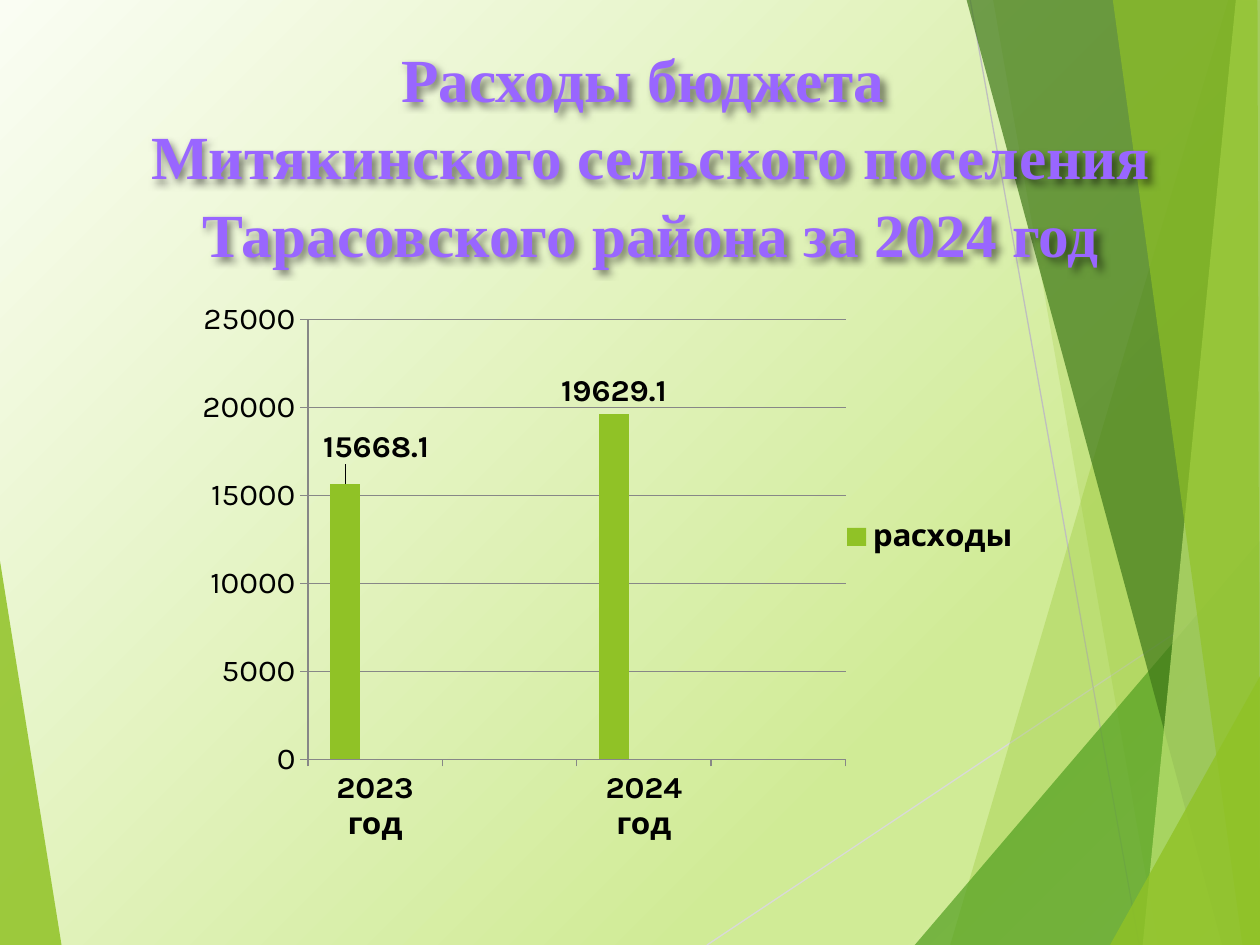
import pptx
import pptx.chart.data
import pptx.dml.color
import pptx.enum.chart
import pptx.enum.shapes
import pptx.enum.text
import pptx.oxml
import pptx.oxml.ns
import pptx.util
from pptx.util import Pt

COLORS = {
    "lime": "90C226", "green": "54A021", "dark": "3F7819", "pale": "C0E474",
    "gold": "E6B91E", "title": "9966FF", "text": "000000", "axis": "878787",
    "ray_light": "D9D9D9", "ray": "BFBFBF",
}
BACKGROUND_STOPS = [(0, "FAFDF3"), (74, "D0EB96"), (83, "D0EB96"), (100, "DFF1B9")]
RIGHT, BOTTOM = 720.7, 540

# Outline corners, colour, opacity in percent
LEFT_WEDGE = ([(-0.7, 316), (35.3, 540.7), (-0.7, 540)], "lime", 85)
RIGHT_FACETS = [
    ([(702, 0), (543, BOTTOM), (721.4, 540.7), (RIGHT, 0.7)], "lime", 30),
    ([(567.4, -0.7), (661.7, BOTTOM), (RIGHT, BOTTOM), (RIGHT, -0.7)], "lime", 20),
    ([(522.7, BOTTOM), (720, 309), (RIGHT, BOTTOM)], "green", 72),
    ([(552.2, -0.7), (698.4, BOTTOM), (RIGHT, BOTTOM), (RIGHT, -0.7)], "dark", 70),
    ([(706.3, -0.7), (653, BOTTOM), (RIGHT, BOTTOM), (720, -0.7)], "pale", 70),
    ([(635.8, -0.7), (710, BOTTOM), (720, BOTTOM), (718.6, -0.7)], "lime", 65),
    ([(634.3, BOTTOM), (RIGHT, 385.2), (RIGHT, BOTTOM)], "lime", 80),
]
RAYS = [((404, 540), (720.7, 329), "ray_light"), ((554.4, 0), (651, 540), "ray")]


def rgb(name):
    return pptx.dml.color.RGBColor.from_string(COLORS[name])


def xml(tag, body):
    """Parse an element whose tag and body use the a: and c: prefixes."""
    prefixes = pptx.oxml.ns.nsdecls("a", "c")
    return pptx.oxml.parse_xml(f"<{tag} {prefixes}>{body}</{tag}>")


def manual_layout(x, y, size=None, inner=False):
    edge = '<c:xMode val="edge"/><c:yMode val="edge"/>' if size else ""
    target = '<c:layoutTarget val="inner"/>' if inner else ""
    extent = f'<c:w val="{size[0]}"/><c:h val="{size[1]}"/>' if size else ""
    return xml("c:layout", f'<c:manualLayout>{target}{edge}<c:x val="{x}"/>'
                           f'<c:y val="{y}"/>{extent}</c:manualLayout>')


def paint_background(slide):
    slide.background.fill.gradient()
    gradient = slide.element.find(".//" + pptx.oxml.ns.qn("a:gradFill"))
    for child in list(gradient):
        gradient.remove(child)
    stops = "".join(f'<a:gs pos="{pos * 1000}"><a:srgbClr val="{color}"/></a:gs>'
                    for pos, color in BACKGROUND_STOPS)
    gradient.append(xml("a:gsLst", stops))
    lin = xml("a:lin", "")
    lin.set("ang", "2700000")
    lin.set("scaled", "0")
    gradient.append(lin)


def add_facet(slide, corners, color, opacity):
    points = [(Pt(x), Pt(y)) for x, y in corners]
    builder = slide.shapes.build_freeform(*points[0])
    builder.add_line_segments(points[1:], close=True)
    facet = builder.convert_to_shape()
    facet.shadow.inherit = False
    facet.fill.solid()
    facet.fill.fore_color.rgb = rgb(color)
    facet.line.fill.background()
    tint = facet.fill._xPr.find(".//" + pptx.oxml.ns.qn("a:srgbClr"))
    alpha = xml("a:alpha", "")
    alpha.set("val", str(opacity * 1000))
    tint.append(alpha)


def add_ray(slide, start, end, color):
    ray = slide.shapes.add_connector(
        pptx.enum.shapes.MSO_CONNECTOR.STRAIGHT,
        *[Pt(value) for value in start + end])
    ray.line.color.rgb = rgb(color)
    ray.line.width = Pt(0.75)
    ray.element.spPr.append(xml("a:effectLst", ""))


def add_title(slide, lines):
    title = slide.shapes.add_textbox(Pt(48), Pt(18), Pt(648), Pt(90))
    frame = title.text_frame
    frame.word_wrap = True
    frame.text = "\n".join(lines)
    for paragraph in frame.paragraphs:
        paragraph.alignment = pptx.enum.text.PP_ALIGN.CENTER
        paragraph.line_spacing = 1.05
        font = paragraph.runs[0].font
        font.name, font.size, font.bold = "Times New Roman", Pt(35), True
        font.color.rgb = rgb("title")
    # Soft shadow behind the letters
    title.element.spPr.append(xml(
        "a:effectLst",
        '<a:outerShdw blurRad="50800" dist="38100" dir="2700000">'
        '<a:srgbClr val="000000"><a:alpha val="50000"/></a:srgbClr></a:outerShdw>'))


def style_axis(axis):
    axis.major_tick_mark = pptx.enum.chart.XL_TICK_MARK.OUTSIDE
    axis.minor_tick_mark = pptx.enum.chart.XL_TICK_MARK.NONE
    axis.format.line.color.rgb = rgb("axis")
    axis.format.line.width = Pt(0.75)


def style_legend(chart):
    chart.has_legend = True
    legend = chart.legend
    legend.position = pptx.enum.chart.XL_LEGEND_POSITION.RIGHT
    legend.include_in_layout = False
    legend.font.bold = True
    legend.font.size = Pt(18)
    element = legend._element
    for old in element.findall(pptx.oxml.ns.qn("c:layout")):
        element.remove(old)
    # Only the first series is listed
    hidden = [xml("c:legendEntry", f'<c:idx val="{index}"/><c:delete val="1"/>')
              for index in (1, 2)]
    for offset, part in enumerate(hidden + [manual_layout(0.77, 0.44, (0.22, 0.07))]):
        element.insert(1 + offset, part)


def label_expenses(expenses):
    labels = expenses.data_labels
    labels.show_value = True
    labels.font.bold = True
    labels.font.size = Pt(18)
    labels.font.color.rgb = rgb("text")
    # The first label sits up and to the right of its column
    first = xml("c:dLbl", '<c:idx val="0"/>')
    first.append(manual_layout(0.037, -0.027))
    for flag, value in [("LegendKey", 0), ("Val", 1), ("CatName", 0),
                        ("SerName", 0), ("Percent", 0), ("BubbleSize", 0)]:
        part = xml(f"c:show{flag}", "")
        part.set("val", str(value))
        first.append(part)
    labels._element.insert(0, first)


def add_expense_chart(slide):
    data = pptx.chart.data.CategoryChartData(number_format="General")
    data.categories = ["2023 год", "", "2024 год", ""]
    data.add_series("расходы", [15668.1, None, 19629.1, None])
    for name in ("Series 2", "Series 3"):
        data.add_series(name, [None] * 4)
    chart = slide.shapes.add_chart(
        pptx.enum.chart.XL_CHART_TYPE.COLUMN_CLUSTERED,
        Pt(108.7), Pt(161.3), Pt(480.2), Pt(319.7), data).chart
    chart.has_title = False
    chart.font.name, chart.font.size = "Karla", Pt(18)
    chart.font.color.rgb = rgb("text")

    plot = chart.plots[0]
    plot.gap_width = 150
    plot.overlap = 0
    plot.vary_by_categories = False
    for series, color in zip(plot.series, ("lime", "green", "gold")):
        series.format.fill.solid()
        series.format.fill.fore_color.rgb = rgb(color)
    label_expenses(plot.series[0])

    years, amounts = chart.category_axis, chart.value_axis
    style_axis(years)
    style_axis(amounts)
    years.tick_labels.font.bold = True
    years.tick_labels.font.size = Pt(18)
    amounts.minimum_scale, amounts.maximum_scale, amounts.major_unit = 0, 25000, 5000
    amounts.has_major_gridlines = True
    amounts.major_gridlines.format.line.color.rgb = rgb("axis")
    amounts.major_gridlines.format.line.width = Pt(0.75)
    style_legend(chart)

    area = chart._chartSpace.chart.plotArea
    for old in area.findall(pptx.oxml.ns.qn("c:layout")):
        area.remove(old)
    area.insert(0, manual_layout(0.14, 0.07, (0.64, 0.82), inner=True))


def main():
    deck = pptx.Presentation()
    deck.slide_width, deck.slide_height = Pt(720), Pt(540)
    slide = deck.slides.add_slide(deck.slide_layouts[6])
    # Backdrop
    paint_background(slide)
    add_facet(slide, *LEFT_WEDGE)
    for ray in RAYS:
        add_ray(slide, *ray)
    for facet in RIGHT_FACETS:
        add_facet(slide, *facet)
    # Content
    add_title(slide, ["Расходы бюджета ",
                      "Митякинского сельского поселения Тарасовского района за 2024 год"])
    add_expense_chart(slide)
    deck.save("out.pptx")


if __name__ == "__main__":
    main()
